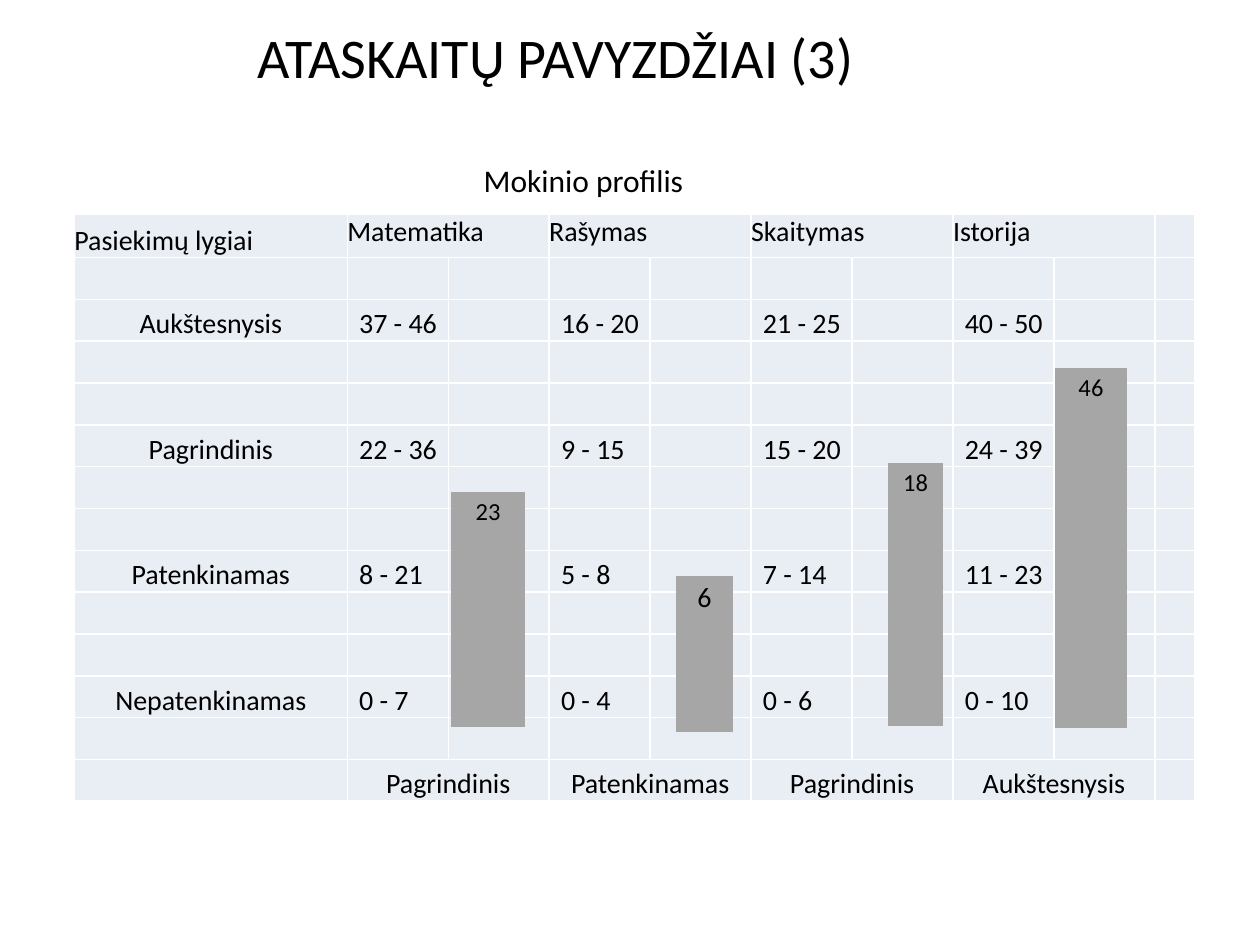
from dataclasses import dataclass

from lxml import etree
from pptx import Presentation
from pptx.chart import data as chart_data
from pptx.dml import color
from pptx.enum import chart as chart_enum, text
from pptx.oxml import ns
from pptx.util import Pt


@dataclass(frozen=True)
class Theme:
    font: str = "Calibri"
    ink: str = "000000"
    cell: str = "E9EDF4"
    border: str = "FFFFFF"
    bar: str = "A6A6A6"
    title_size: int = 32
    caption_size: int = 18
    table_size: int = 16
    label_size: int = 14
    chart_size: int = 10


def rgb(value):
    return color.RGBColor.from_string(value)


def format_font(font, theme, size):
    font.name, font.size = theme.font, Pt(size)
    font.color.rgb = rgb(theme.ink)


def write(frame, content, *, theme, size, align=text.PP_ALIGN.LEFT):
    paragraph = frame.paragraphs[0]
    paragraph.alignment = align
    run = paragraph.add_run()
    run.text = content
    format_font(run.font, theme, size)


def add_element(parent, tag, **attributes):
    return etree.SubElement(parent, ns.qn(tag), **attributes)


class SlideBuilder:
    def __init__(self, slide, theme):
        self.slide = slide
        self.theme = theme

    def title(self, content, left, top, width, height):
        shape = self.slide.shapes.title
        shape.left, shape.top, shape.width, shape.height = map(Pt, (left, top, width, height))
        shape.text_frame.auto_size = text.MSO_AUTO_SIZE.SHAPE_TO_FIT_TEXT
        write(shape.text_frame, content, theme=self.theme,
              size=self.theme.title_size, align=text.PP_ALIGN.CENTER)

    def caption(self, content, left, top, width, height):
        shape = self.slide.shapes.add_textbox(*map(Pt, (left, top, width, height)))
        shape.text_frame.word_wrap = True
        shape.text_frame.auto_size = text.MSO_AUTO_SIZE.SHAPE_TO_FIT_TEXT
        write(shape.text_frame, content, theme=self.theme, size=self.theme.caption_size)

    def table(self, left, top, column_widths, row_heights):
        frame = self.slide.shapes.add_table(
            len(row_heights), len(column_widths), Pt(left), Pt(top),
            Pt(sum(column_widths)), Pt(sum(row_heights)))
        table = frame.table
        table.first_row = table.horz_banding = False
        for column, width in zip(table.columns, column_widths):
            column.width = Pt(width)
        for row, height in zip(table.rows, row_heights):
            row.height = Pt(height)
        for cell in table.iter_cells():
            self.style_cell(cell)
        return table

    def style_cell(self, cell):
        cell.margin_left = cell.margin_right = cell.margin_top = cell.margin_bottom = 0
        properties = cell._tc.get_or_add_tcPr()
        for side in ("a:lnL", "a:lnR", "a:lnT", "a:lnB"):
            line = add_element(properties, side, w=str(Pt(1)))
            fill = add_element(line, "a:solidFill")
            add_element(fill, "a:srgbClr", val=self.theme.border)
        cell.fill.solid()
        cell.fill.fore_color.rgb = rgb(self.theme.cell)

    def cell_text(self, cell, content, align=text.PP_ALIGN.LEFT,
                  anchor=text.MSO_ANCHOR.BOTTOM, indent=0):
        cell.margin_left = Pt(indent)
        cell.vertical_anchor = anchor
        write(cell.text_frame, content, theme=self.theme,
              size=self.theme.table_size, align=align)

    def score_bar(self, score, percent, box, label_size, plot_area=None):
        values = chart_data.CategoryChartData()
        values.categories = ["1"]
        values.add_series(score, [percent])
        chart = self.slide.shapes.add_chart(
            chart_enum.XL_CHART_TYPE.COLUMN_CLUSTERED, *map(Pt, box), values).chart
        chart.has_legend = chart.has_title = False
        format_font(chart.font, self.theme, self.theme.chart_size)
        chart.category_axis.visible = chart.value_axis.visible = False
        axis = chart.value_axis
        axis.has_major_gridlines = False
        axis.minimum_scale, axis.maximum_scale, axis.major_unit = 0, 100, 20
        plot = chart.plots[0]
        plot.gap_width = 150
        plot.vary_by_categories = False
        series = plot.series[0]
        series.format.fill.solid()
        series.format.fill.fore_color.rgb = rgb(self.theme.bar)
        self.label_with_name(series, label_size)
        if plot_area:
            self.place_plot(chart, plot_area)

    def label_with_name(self, series, size):
        series.data_labels.show_value = True
        point_label = series.points[0].data_label
        for label in (series.data_labels, point_label):
            label.position = chart_enum.XL_LABEL_POSITION.INSIDE_END
            format_font(label.font, self.theme, size)
        element = point_label._get_or_add_dLbl()
        for tag, value in (("c:showVal", "0"), ("c:showSerName", "1")):
            element.find(ns.qn(tag)).set("val", value)

    def place_plot(self, chart, plot_area):
        area = chart._chartSpace.chart.plotArea
        for layout in area.findall(ns.qn("c:layout")):
            area.remove(layout)
        layout = etree.Element(ns.qn("c:layout"))
        area.insert(0, layout)
        manual = add_element(layout, "c:manualLayout")
        add_element(manual, "c:layoutTarget", val="inner")
        for name in ("xMode", "yMode"):
            add_element(manual, f"c:{name}", val="edge")
        for name, value in zip("xywh", plot_area):
            add_element(manual, f"c:{name}", val=str(value))


def fill_profile(builder, table):
    center = text.PP_ALIGN.CENTER
    subjects = {
        "Matematika": (["37 - 46", "22 - 36", "8 - 21", "0 - 7"], "Pagrindinis"),
        "Rašymas": (["16 - 20", "9 - 15", "5 - 8", "0 - 4"], "Patenkinamas"),
        "Skaitymas": (["21 - 25", "15 - 20", "7 - 14", "0 - 6"], "Pagrindinis"),
        "Istorija": (["40 - 50", "24 - 39", "11 - 23", "0 - 10"], "Aukštesnysis"),
    }
    levels = ["Aukštesnysis", "Pagrindinis", "Patenkinamas", "Nepatenkinamas"]
    level_rows = range(2, 14, 3)
    last_row = len(table.rows) - 1
    builder.cell_text(table.cell(0, 0), "Pasiekimų lygiai")
    for row, level in zip(level_rows, levels):
        builder.cell_text(table.cell(row, 0), level, align=center)
    for index, (subject, (ranges, result)) in enumerate(subjects.items()):
        column = 1 + 2 * index
        for row in (0, last_row):
            table.cell(row, column).merge(table.cell(row, column + 1))
        builder.cell_text(table.cell(0, column), subject, anchor=text.MSO_ANCHOR.TOP)
        builder.cell_text(table.cell(last_row, column), result, align=center)
        for row, score_range in zip(level_rows, ranges):
            builder.cell_text(table.cell(row, column), score_range, indent=6.75)


def main():
    theme = Theme()
    presentation = Presentation()
    presentation.slide_width, presentation.slide_height = Pt(720), Pt(540)
    slide = presentation.slides.add_slide(presentation.slide_layouts[5])
    builder = SlideBuilder(slide, theme)
    builder.title("ATASKAITŲ PAVYZDŽIAI (3)", 71, 9, 493, 46)
    table = builder.table(42.5, 122.5, [156, *[57.7] * 8, 23], [24.7, *[23.9] * 13])
    fill_profile(builder, table)
    bars = [
        ("23", 53, (224, 157, 110, 264), theme.label_size, None),
        ("6", 38, (360, 179.3, 85, 244), theme.table_size, None),
        ("18", 67, (456.5, 167.5, 106, 252.7), theme.label_size, (0.26, 0.09, 0.74, 0.89)),
        ("46", 91, (569.5, 185, 108, 236), theme.label_size, None),
    ]
    for bar in bars:
        builder.score_bar(*bar)
    builder.caption("Mokinio profilis", 269.3, 88.6, 221, 29)
    presentation.save("out.pptx")


if __name__ == "__main__":
    main()
